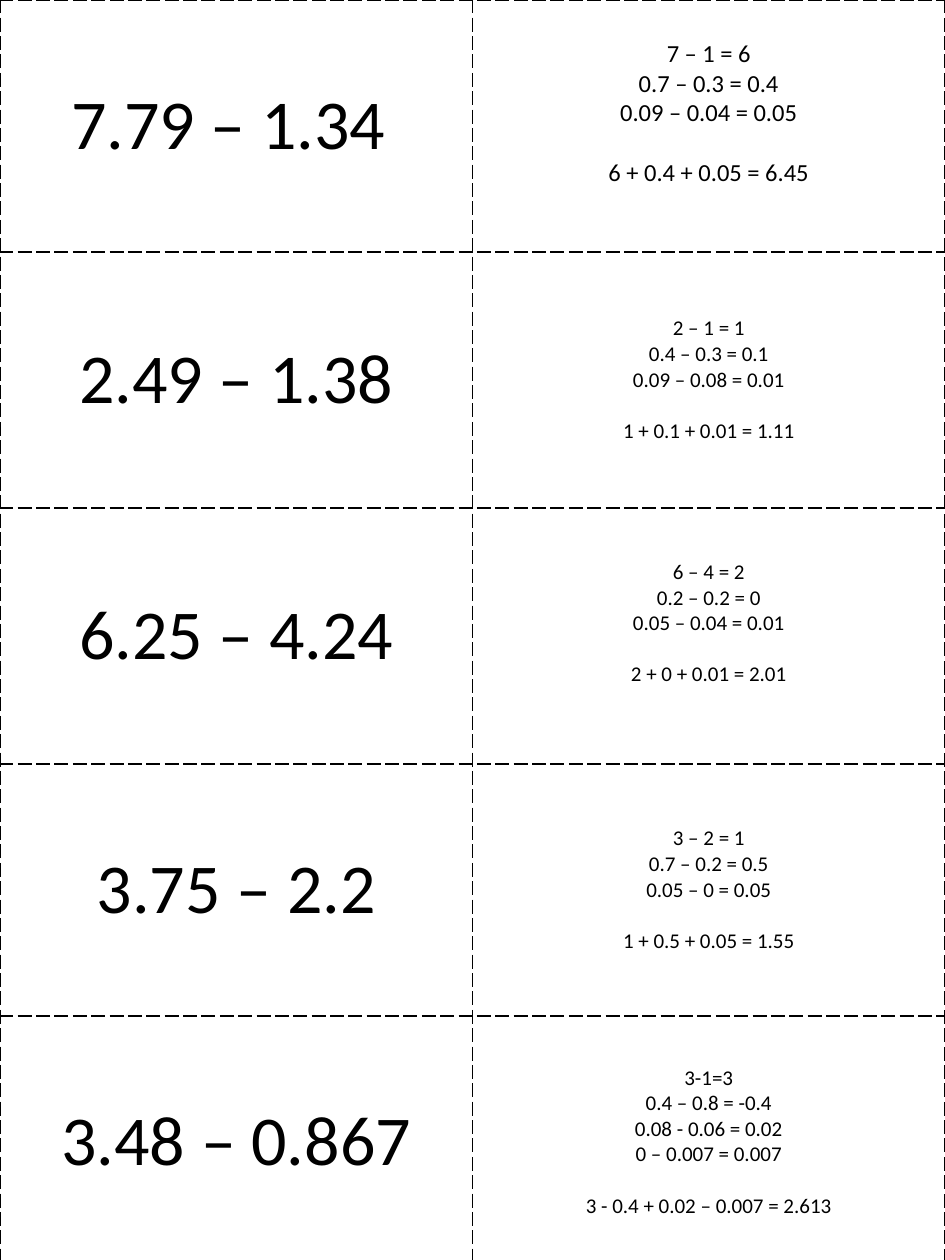
from typing import NamedTuple

from lxml import etree
from pptx import Presentation
from pptx.dml.color import RGBColor
from pptx.enum.text import MSO_ANCHOR, PP_ALIGN
from pptx.oxml.ns import qn
from pptx.util import Cm, Pt

SLIDE_WIDTH, SLIDE_HEIGHT = Cm(19.05), Cm(25.4)
INK = "000000"
LINE_HEIGHT = 1.22


class Card(NamedTuple):
    question: str
    steps: list[str]
    answer: str
    height: float = 5.08
    steps_size: int = 12
    space_below: float = 0


CARDS = [
    Card("7.79 – 1.34 ", ["7 – 1 = 6", "0.7 – 0.3 = 0.4", "0.09 – 0.04 = 0.05"],
         "6 + 0.4 + 0.05 = 6.45", steps_size=14, space_below=0.5),
    Card("2.49 – 1.38", ["2 – 1 = 1", "0.4 – 0.3 = 0.1", "0.09 – 0.08 = 0.01"],
         "1 + 0.1 + 0.01 = 1.11", height=5.16),
    Card("6.25 – 4.24", ["6 – 4 = 2", "0.2 – 0.2 = 0", "0.05 – 0.04 = 0.01"],
         "2 + 0 + 0.01 = 2.01", height=5.16, space_below=0.5),
    Card("3.75 – 2.2", ["3 – 2 = 1", "0.7 – 0.2 = 0.5", "0.05 – 0 = 0.05"],
         "1 + 0.5 + 0.05 = 1.55"),
    Card("3.48 – 0.867",
         ["3-1=3", "0.4 – 0.8 = -0.4", "0.08 - 0.06 = 0.02", "0 – 0.007 = 0.007"],
         "3 - 0.4 + 0.02 – 0.007 = 2.613"),
]


def rgb(hex_colour: str) -> RGBColor:
    return RGBColor.from_string(hex_colour)


def add_cut_lines(cell) -> None:
    """Give all four sides of the cell a dashed border."""
    properties = cell._tc.get_or_add_tcPr()
    for position, side in enumerate(("lnL", "lnR", "lnT", "lnB")):
        border = etree.Element(qn(f"a:{side}"), w=str(Pt(1)))
        fill = etree.SubElement(border, qn("a:solidFill"))
        etree.SubElement(fill, qn("a:srgbClr"), val=INK)
        etree.SubElement(border, qn("a:prstDash"), val="lgDash")
        properties.insert(position, border)


def fill_cell(cell, lines: list[str], size: int, space_below: float = 0) -> None:
    cell.fill.background()
    add_cut_lines(cell)
    cell.vertical_anchor = MSO_ANCHOR.MIDDLE
    cell.margin_left = cell.margin_right = Cm(0.18)
    cell.margin_top, cell.margin_bottom = Cm(0), Cm(space_below)
    cell.text = "\n".join(lines)
    for paragraph in cell.text_frame.paragraphs:
        paragraph.alignment = PP_ALIGN.CENTER
        paragraph.font.name = "Calibri"
        paragraph.font.size = Pt(size)
        paragraph.font.color.rgb = rgb(INK)


def main() -> None:
    deck = Presentation()
    deck.slide_width, deck.slide_height = SLIDE_WIDTH, SLIDE_HEIGHT
    slide = deck.slides.add_slide(deck.slide_layouts[6])

    total_height = Cm(sum(card.height for card in CARDS))
    cards_table = slide.shapes.add_table(
        len(CARDS), 2, Cm(0), Cm(0), SLIDE_WIDTH, total_height).table
    cards_table.first_row = cards_table.horz_banding = False

    for row, card in zip(cards_table.rows, CARDS):
        row.height = Cm(card.height)
        question, solution = row.cells
        fill_cell(question, [card.question], 40)
        fill_cell(solution, [*card.steps, card.answer],
                  card.steps_size, card.space_below)
        answer = solution.text_frame.paragraphs[-1]
        answer.space_before = Pt(card.steps_size * LINE_HEIGHT)

    deck.save("out.pptx")


if __name__ == "__main__":
    main()
